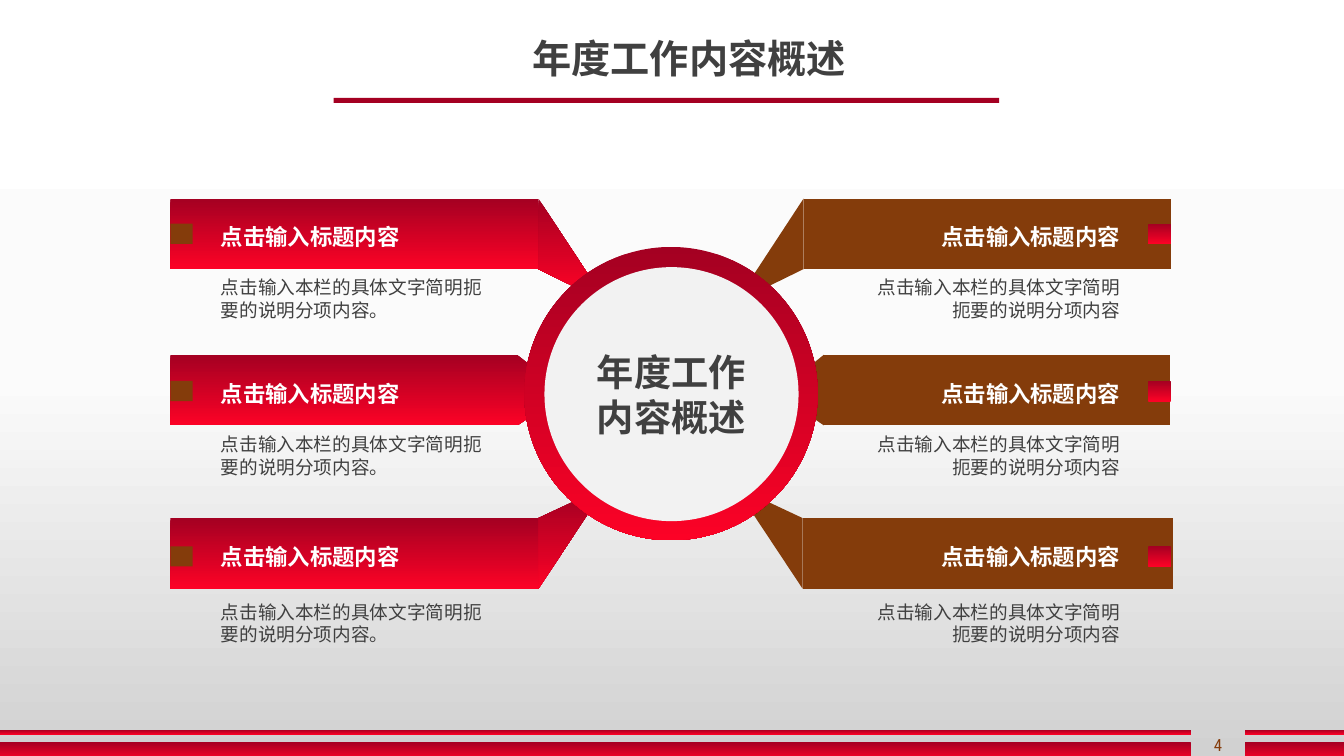
from copy import deepcopy
from dataclasses import dataclass

from lxml import etree
from pptx import Presentation
from pptx.dml.color import RGBColor
from pptx.dml.fill import FillFormat
from pptx.enum.shapes import MSO_SHAPE as SHAPE
from pptx.enum.text import MSO_ANCHOR as ANCHOR, PP_ALIGN as ALIGN
from pptx.oxml.ns import qn
from pptx.shapes.autoshape import Shape
from pptx.slide import Slide
from pptx.text.text import TextFrame
from pptx.util import Inches, Pt

CRIMSON = RGBColor(0xA4, 0x00, 0x22)
SCARLET = RGBColor(0xFC, 0x02, 0x26)
BROWN = RGBColor(0x84, 0x3C, 0x0B)
DARK = RGBColor(0x40, 0x40, 0x40)
WHITE = RGBColor(0xFF, 0xFF, 0xFF)
NEAR_WHITE = RGBColor(0xFB, 0xFB, 0xFB)
SILVER = RGBColor(0xD1, 0xD1, 0xD1)
PALE = RGBColor(0xF2, 0xF2, 0xF2)

CJK = "Noto Sans CJK SC"
HEADING = "点击输入标题内容"
DETAIL = "点击输入本栏的具体文字简明扼要的说明分项内容"
BAR_LEFT = 1.69
BAR_HEIGHT = 0.7


@dataclass
class Row:
    """Bar edges, flap tips (reach from the hinge, y) and text tops."""
    top: float
    left_hinge: float
    right_hinge: float
    right_end: float
    tips: tuple[tuple[float, float], tuple[float, float]]
    marker: float
    heading: float
    detail: float


ROWS = [
    Row(3.52, 5.13, 8.17, 11.6, ((0.38, 3.83), (0.38, 3.96)), 3.78, 3.72, 4.43),
    Row(1.97, 5.34, 7.97, 11.61, ((0.57, 2.84), (0.49, 2.91)), 2.22, 2.16, 2.87),
    Row(5.14, 5.34, 7.96, 11.63, ((0.49, 4.91), (0.57, 4.98)), 5.42, 5.34, 6.09),
]


def vertical_gradient(fill: FillFormat, start: RGBColor, end: RGBColor) -> None:
    fill.gradient()
    fill.gradient_angle = 270
    for stop, color in zip(fill.gradient_stops, (start, end)):
        stop.color.rgb = color


def paint(sp: Shape, color: RGBColor | None) -> Shape:
    """Fill with a colour, or with the red gradient when it is None."""
    sp.shadow.inherit = False
    sp.line.fill.background()
    if color is None:
        vertical_gradient(sp.fill, CRIMSON, SCARLET)
    else:
        sp.fill.solid()
        sp.fill.fore_color.rgb = color
    return sp


def add_preset(slide: Slide, kind: SHAPE, box: tuple[float, ...],
               color: RGBColor | None = None) -> Shape:
    return paint(slide.shapes.add_shape(kind, *map(Inches, box)), color)


def add_polygon(slide: Slide, points: list[tuple[float, float]],
                color: RGBColor | None) -> None:
    corners = [(Inches(x), Inches(y)) for x, y in points]
    builder = slide.shapes.build_freeform(*corners[0])
    builder.add_line_segments(corners[1:], close=True)
    paint(builder.convert_to_shape(), color)


def write(tf: TextFrame, text: str, *, size: float, color: RGBColor = DARK,
          bold: bool = False, font: str = CJK, align: ALIGN = ALIGN.LEFT,
          anchor: ANCHOR = ANCHOR.TOP, side: float = 0.1,
          spacing: float | None = None) -> None:
    tf.word_wrap = True
    tf.vertical_anchor = anchor
    tf.margin_left = tf.margin_right = Inches(side)
    tf.margin_top = tf.margin_bottom = Inches(0.05)
    for i, line in enumerate(text.split("\n")):
        p = tf.add_paragraph() if i else tf.paragraphs[0]
        p.alignment = align
        p.line_spacing = spacing
        r = p.add_run()
        r.text = line
        r.font.size, r.font.bold, r.font.name = Pt(size), bold, font
        r.font.color.rgb = color
        latin = r.font._element.find(qn("a:latin"))
        ea = etree.Element(qn("a:ea"), typeface=font)
        latin.addnext(ea)


def add_text(slide: Slide, box: tuple[float, ...], text: str, **style) -> None:
    write(slide.shapes.add_textbox(*map(Inches, box)).text_frame, text, **style)


def add_background(slide: Slide) -> None:
    vertical_gradient(slide.background.fill, WHITE, SILVER)
    stops = next(slide.element.iter(qn("a:gsLst")))
    middle = deepcopy(stops[0])
    middle.set("pos", "50000")
    middle[0].set("val", str(NEAR_WHITE))
    stops.insert(1, middle)


def add_ribbon(slide: Slide, row: Row, outer: float, hinge: float,
               direction: int, color: RGBColor | None) -> None:
    """Draw a bar and the flap that folds from its hinge towards the ring."""
    top, bottom = row.top, row.top + BAR_HEIGHT
    add_polygon(slide, [(outer, top), (outer, bottom), (hinge, bottom), (hinge, top)], color)
    tips = [(hinge + direction * reach, y) for reach, y in row.tips]
    add_polygon(slide, [(hinge, top), *tips, (hinge, bottom)], color)


def add_row_texts(slide: Slide, row: Row) -> None:
    for left, detail_left, width, detail, align in (
        (2.19, 2.19, 2.59, DETAIL + "。", ALIGN.LEFT),
        (8.25, 8.66, 2.45, DETAIL, ALIGN.RIGHT),
    ):
        add_text(slide, (left, row.heading, 2.86, 0.42), HEADING, size=16,
                 color=WHITE, bold=True, align=align, side=0)
        add_text(slide, (detail_left, row.detail, width, 0.18), detail, size=13.3,
                 align=align, anchor=ANCHOR.MIDDLE, side=0)


def main() -> None:
    prs = Presentation()
    prs.slide_width, prs.slide_height = Inches(13.33), Inches(7.5)
    slide = prs.slides.add_slide(prs.slide_layouts[6])
    add_background(slide)

    add_preset(slide, SHAPE.RECTANGLE, (3.31, 0.97, 6.6, 0.05), CRIMSON)
    for left, width in ((0, 11.81), (12.35, 0.98)):
        for top, height in ((7.24, 0.05), (7.36, 0.18)):
            add_preset(slide, SHAPE.RECTANGLE, (left, top, width, height))
    add_text(slide, (4.92, 0.34, 3.83, 0.56), "年度工作内容概述", size=28,
             bold=True, align=ALIGN.CENTER, spacing=0.9)

    for row in ROWS:
        add_ribbon(slide, row, row.right_end, row.right_hinge, -1, BROWN)
        add_ribbon(slide, row, BAR_LEFT, row.left_hinge, 1, None)
    for row in ROWS:
        for left, color in ((BAR_LEFT, BROWN), (11.39, None)):
            add_preset(slide, SHAPE.RECTANGLE, (left, row.marker, 0.22, 0.2), color)
        add_row_texts(slide, row)

    add_preset(slide, SHAPE.OVAL, (5.2, 2.45, 2.91, 2.91))
    hub = add_preset(slide, SHAPE.OVAL, (5.4, 2.65, 2.52, 2.52), PALE)
    write(hub.text_frame, "年度工作\n内容概述", size=26.6, bold=True,
          align=ALIGN.CENTER, anchor=ANCHOR.MIDDLE)
    add_text(slide, (11.83, 7.24, 0.5, 0.29), "4", size=12, color=BROWN,
             font="Roboto Condensed", align=ALIGN.CENTER, anchor=ANCHOR.MIDDLE)

    prs.save("out.pptx")


if __name__ == "__main__":
    main()
